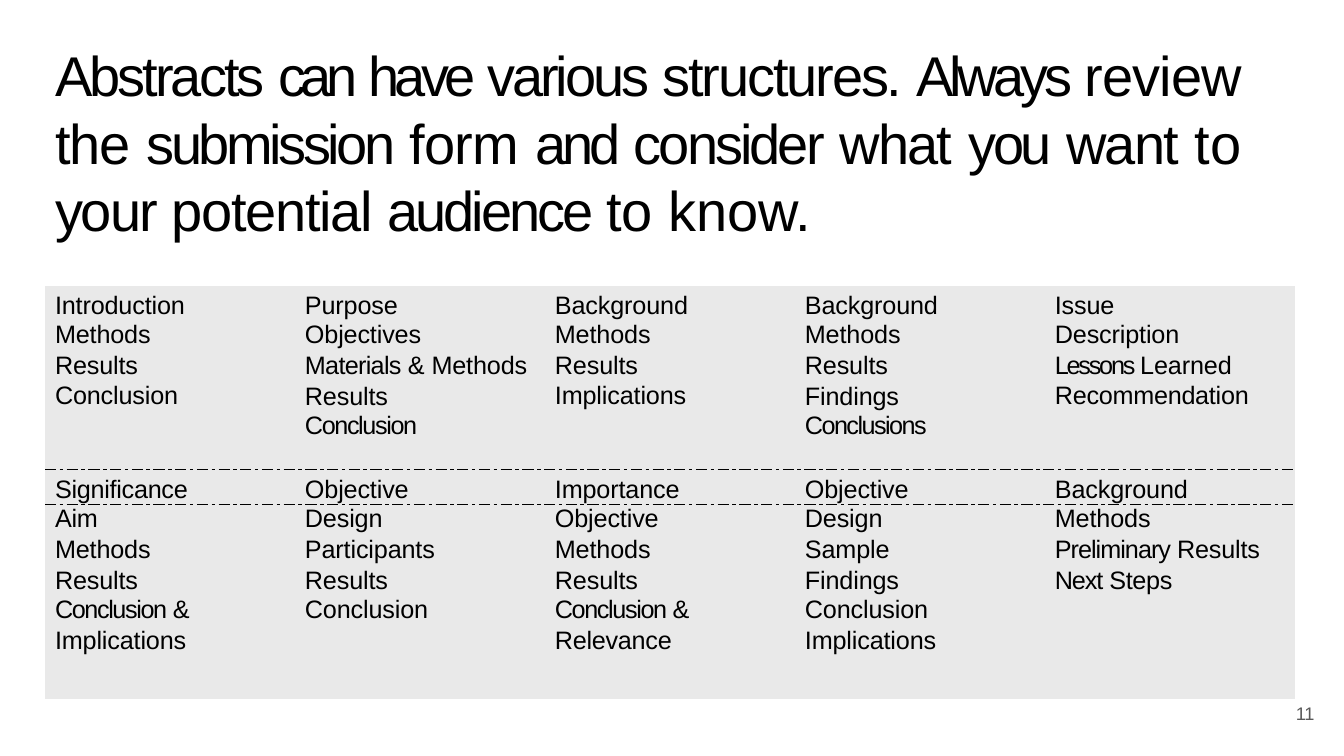
"""Build a slide listing common section structures for abstracts."""
from lxml import etree
from pptx import Presentation
from pptx.dml.color import RGBColor
from pptx.enum.text import MSO_AUTO_SIZE, PP_ALIGN
from pptx.oxml.ns import qn
from pptx.util import Pt

PX = 914400 / 100.8
JUSTIFY = PP_ALIGN.JUSTIFY
LEFT = PP_ALIGN.LEFT
GROW = MSO_AUTO_SIZE.SHAPE_TO_FIT_TEXT
NO_STYLE = "{2D5ABB26-0587-4C30-8999-92F81FD0307C}"


def px(length):
    return round(length * PX)


def write(frame, spans, *, size, color="000000", align=LEFT, indent=0, before=0, leading=None):
    frame.word_wrap = True
    para = frame.paragraphs[0]
    para.alignment = align
    para.space_before = Pt(before)
    if leading:
        para.line_spacing = Pt(leading)
    para._p.get_or_add_pPr().set("marL", str(px(indent)))
    para._p.get_or_add_pPr().set("indent", "0")
    for text, spacing in spans:
        span = para.add_run()
        span.text = text
        span.font.name = "Arial"
        span.font.size = Pt(size)
        span.font.color.rgb = RGBColor.from_string(color)
        span._r.get_or_add_rPr().set("spc", str(round(spacing * 100)))


deck = Presentation()
deck.slide_width, deck.slide_height = px(1344), px(756)
page = deck.slides.add_slide(deck.slide_layouts[6])

title = [
    ("Abstracts ", -2.1), ("can ", -3.9), ("have ", -3.3), ("various ", -2.2),
    ("structures. ", -1.5), ("Always ", -3.1), ("review ", -0.6), ("the ", -0.9),
    ("submission ", -2.5), ("form ", -0.7), ("and ", -3.1), ("consider ", -2.1),
    ("what ", -1.3), ("you ", -2.5), ("want ", -1.3), ("to ", -0.2), ("your ", -1.4),
    ("potential ", -0.9), ("audience ", -2.1), ("to ", 0), ("know.", -0.1),
]
texts = [
    ((1292, 702, 28, 25), 0, [("11", -0.2)],
     dict(size=13, color="595959", indent=4, before=0.3)),
    ((54, 40, 1187, 205), 1, title, dict(size=40, align=JUSTIFY, indent=1, before=1)),
]
for place, top_inset, spans, style in texts:
    box = page.shapes.add_textbox(*map(px, place))
    frame = box.text_frame
    frame.margin_left = frame.margin_right = frame.margin_bottom = 0
    frame.margin_top = px(top_inset)
    frame.auto_size = GROW
    write(frame, spans, **style)

column_widths = [203, 291, 209, 245, 302]
column_indents = [10, 57, 16, 57, 62]
row_heights = [35, 30, 30, 89, 35, 30, 31, 30, 30, 73]
row_leadings = [21.3, 20.2, 20.8, 20.6, 21.3, 20.2, 20.8, 20.5, 20.2, 20.8]
group_starts = {0: 2.7, 4: 2.6}
divider_sides = {3: "a:lnB", 4: "a:lnT"}
sections = [
    ["Introduction", "Purpose", "Background", "Background", "Issue"],
    ["Methods", "Objectives", "Methods", "Methods", "Description"],
    ["Results", [("Materials ", -0.5), ("& ", 0), ("Methods", -0.1)], "Results", "Results",
     [("Lessons ", -1.6), ("Learned", -0.1)]],
    ["Conclusion", [("Results ", -0.1), ("Conclusion", -1)], "Implications",
     [("Findings ", -0.1), ("Conclusions", -1.1)], [("Recommendation", -0.2)]],
    [[("Significance", -0.2)], "Objective", "Importance", "Objective", "Background"],
    [[("Aim", -0.2)], "Design", "Objective", "Design", "Methods"],
    ["Methods", "Participants", "Methods", "Sample",
     [("Preliminary ", -0.7), ("Results", -0.1)]],
    ["Results", "Results", "Results", "Findings", [("Next ", -0.8), ("Steps", -0.2)]],
    [[("Conclusion ", -1), ("&", -0.5)], "Conclusion",
     [("Conclusion ", -1), ("&", -0.5)], "Conclusion", []],
    ["Implications", [], [("Relevance", -0.2)], "Implications", []],
]

table = page.shapes.add_table(
    len(row_heights), len(column_widths), px(45), px(286),
    px(sum(column_widths)), px(sum(row_heights))).table
table.first_row = table.horz_banding = False
table._tbl.tblPr.find(qn("a:tableStyleId")).text = NO_STYLE
for column, width in zip(table.columns, column_widths):
    column.width = px(width)
for row, height in zip(table.rows, row_heights):
    row.height = px(height)

for row_index, row_sections in enumerate(sections):
    for column_index, section in enumerate(row_sections):
        cell = table.cell(row_index, column_index)
        cell.margin_left = cell.margin_right = cell.margin_bottom = 0
        cell.margin_top = px(4) if row_index in group_starts else 0
        cell.fill.solid()
        cell.fill.fore_color.rgb = RGBColor.from_string("E9E9E9")
        spans = [(section, -0.1)] if isinstance(section, str) else section
        wraps = row_index == 3 and len(spans) > 1
        write(cell.text_frame, spans, size=18, indent=column_indents[column_index],
              before=0.2 if wraps else group_starts.get(row_index, 0),
              leading=21.1 if wraps else row_leadings[row_index])
        if row_index in divider_sides:
            line = etree.Element(qn(divider_sides[row_index]), w=str(Pt(1)))
            fill = etree.SubElement(line, qn("a:solidFill"))
            etree.SubElement(fill, qn("a:srgbClr"), val="000000")
            etree.SubElement(line, qn("a:prstDash"), val="sysDashDot")
            cell._tc.get_or_add_tcPr().insert(0, line)
table.cell(3, 1).margin_right = px(50)

deck.save("out.pptx")
